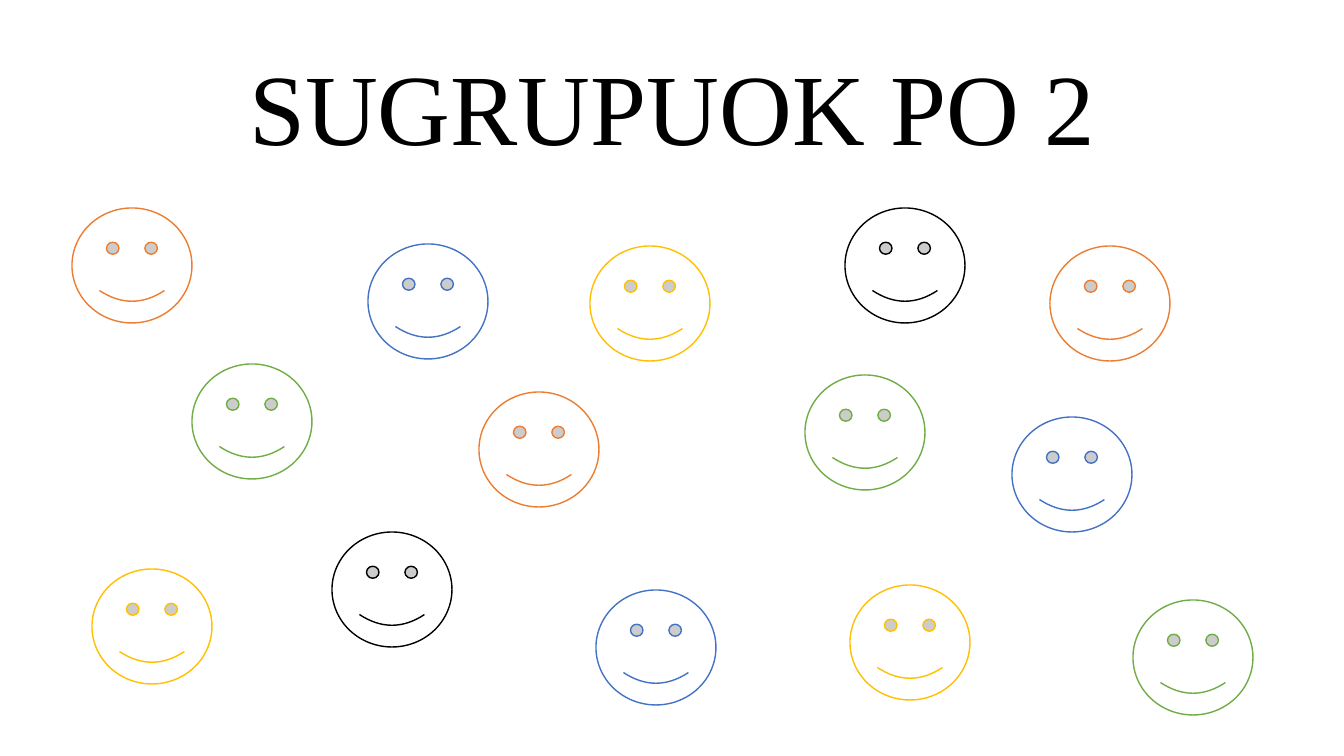
"""Build a counting slide: a heading above scattered smiley faces to group in twos."""
from typing import NamedTuple

from pptx import Presentation
from pptx.dml.color import RGBColor
from pptx.enum.shapes import MSO_SHAPE
from pptx.enum.text import MSO_ANCHOR, PP_ALIGN
from pptx.slide import Slide
from pptx.util import Emu, Pt

SMILEY = MSO_SHAPE.SMILEY_FACE
MIDDLE = MSO_ANCHOR.MIDDLE
CENTER = PP_ALIGN.CENTER

PX_PER_INCH = 100.8
SLIDE_WIDTH, SLIDE_HEIGHT = 1344, 756
FACE_WIDTH, FACE_HEIGHT = 120, 115
FONT = "Times New Roman"
COLORS = {
    "white": "FFFFFF",
    "black": "000000",
    "orange": "ED7D31",
    "green": "70AD47",
    "blue": "4472C4",
    "yellow": "FFC000",
}


class Face(NamedTuple):
    left: int
    top: int
    color: str


FACES = [
    Face(72, 208, "orange"),
    Face(479, 392, "orange"),
    Face(805, 375, "green"),
    Face(1050, 246, "orange"),
    Face(368, 244, "blue"),
    Face(590, 246, "yellow"),
    Face(845, 208, "black"),
    Face(1012, 417, "blue"),
    Face(596, 590, "blue"),
    Face(332, 532, "black"),
    Face(192, 364, "green"),
    Face(92, 569, "yellow"),
    Face(850, 585, "yellow"),
    Face(1133, 600, "green"),
]


def px(length: int) -> Emu:
    return Emu(round(length * 914400 / PX_PER_INCH))


def rgb(color: str) -> RGBColor:
    return RGBColor.from_string(COLORS[color])


def add_text(slide: Slide, text: str, left: int, top: int, width: int, height: int, *,
             size: int, color: str = "black", line_spacing: float = 1.0) -> None:
    frame = slide.shapes.add_textbox(px(left), px(top), px(width), px(height)).text_frame
    frame.word_wrap = True
    frame.vertical_anchor = MIDDLE
    paragraph = frame.paragraphs[0]
    paragraph.alignment = CENTER
    paragraph.line_spacing = line_spacing
    run = paragraph.add_run()
    run.text = text
    run.font.name = FONT
    run.font.size = Pt(size)
    run.font.color.rgb = rgb(color)


def add_face(slide: Slide, face: Face) -> None:
    smiley = slide.shapes.add_shape(
        SMILEY, px(face.left), px(face.top), px(FACE_WIDTH), px(FACE_HEIGHT))
    smiley.shadow.inherit = False
    smiley.fill.solid()
    smiley.fill.fore_color.rgb = rgb("white")
    smiley.line.color.rgb = rgb(face.color)
    smiley.line.width = Pt(1)


def main() -> None:
    presentation = Presentation()
    presentation.slide_width = px(SLIDE_WIDTH)
    presentation.slide_height = px(SLIDE_HEIGHT)
    slide = presentation.slides.add_slide(presentation.slide_layouts[6])
    add_text(slide, "SUGRUPUOK PO 2", 92, 40, 1160, 146, size=72, line_spacing=0.9)
    for face in FACES:
        add_face(slide, face)
    presentation.save("out.pptx")


if __name__ == "__main__":
    main()
